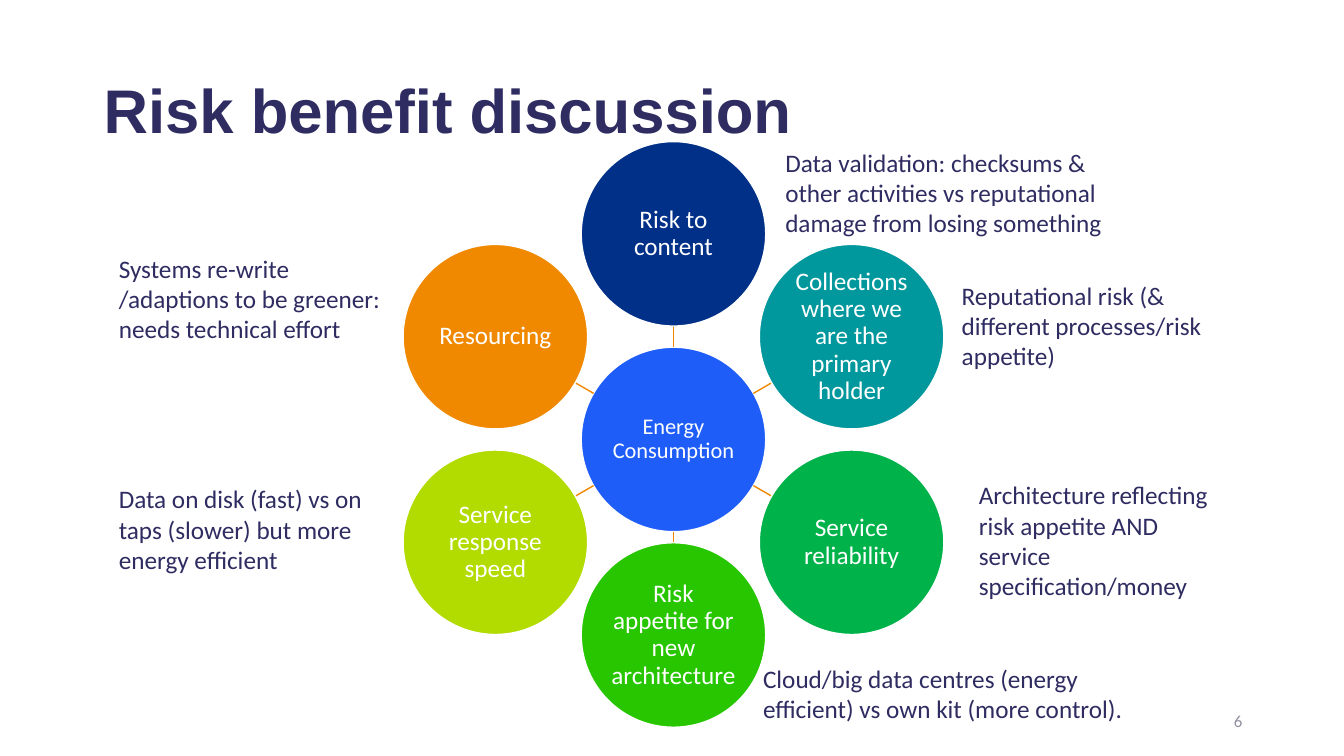
from math import cos, radians, sin
from typing import NamedTuple

from lxml.etree import SubElement
from pptx import Presentation
from pptx.dml.color import RGBColor
from pptx.enum.shapes import MSO_CONNECTOR, MSO_SHAPE
from pptx.enum.text import MSO_ANCHOR, PP_ALIGN
from pptx.oxml.ns import qn
from pptx.util import Inches, Pt

NAVY = "2E2C61"
WHITE = "FFFFFF"
ORANGE = "F08900"
HUB_X, HUB_Y = 6.68, 4.36
RADIUS = 0.915
RING = 2.04


class Topic(NamedTuple):
    text: str
    fill: str
    angle: float  # degrees clockwise from three o'clock
    reach: float = RING


class Note(NamedTuple):
    text: str
    left: float
    top: float
    width: float
    height: float


TOPICS = [
    Topic("Risk to content", "003088", -90),
    Topic("Collections where we are the primary holder", "00989D", -30),
    Topic("Service reliability", "00B24A", 30),
    Topic("Risk appetite for new architecture", "27C600", 90, 1.94),
    Topic("Service response speed", "B2DB00", 150),
    Topic("Resourcing", ORANGE, 210),
]

NOTES = [
    Note("Data validation: checksums & other activities vs reputational "
         "damage from losing something", 7.69, 1.41, 3.78, 1.01),
    Note("Reputational risk (& different processes/risk appetite)",
         9.44, 2.73, 2.71, 1.01),
    Note("Architecture reflecting risk appetite AND service "
         "specification/money", 9.61, 4.71, 2.71, 1.31),
    Note("Cloud/big data centres (energy efficient) vs own kit "
         "(more control).", 7.47, 6.53, 3.94, 0.71),
    Note("Data on disk (fast) vs on taps (slower) but more energy efficient",
         1.08, 4.75, 2.71, 1.01),
    Note("Systems re-write /adaptions to be greener: needs technical effort",
         1.08, 2.46, 2.81, 1.01),
]


def tint(code: str) -> RGBColor:
    return RGBColor.from_string(code)


def write(frame, text: str, size: float, color: str, font: str = "Calibri",
          bold: bool = False, align=PP_ALIGN.LEFT, anchor=MSO_ANCHOR.TOP,
          spacing: float = 1.0) -> None:
    frame.word_wrap = True
    frame.vertical_anchor = anchor
    para = frame.paragraphs[0]
    para.alignment = align
    para.line_spacing = spacing
    run = para.add_run()
    run.text = text
    run.font.name = font
    run.font.size = Pt(size)
    run.font.bold = bold
    run.font.color.rgb = tint(color)


def add_note(slide, note: Note, size: float = 18, color: str = NAVY,
             **style) -> None:
    box = slide.shapes.add_textbox(*map(Inches, note[1:]))
    write(box.text_frame, note.text, size, color, **style)


def add_disc(slide, text: str, fill: str, x: float, y: float,
             size: float = 18) -> None:
    """Draw a labelled circle centred on x, y."""
    disc = slide.shapes.add_shape(
        MSO_SHAPE.OVAL, Inches(x - RADIUS), Inches(y - RADIUS),
        Inches(2 * RADIUS), Inches(2 * RADIUS))
    disc.shadow.inherit = False
    disc.fill.solid()
    disc.fill.fore_color.rgb = tint(fill)
    disc.line.color.rgb = tint(WHITE)
    disc.line.width = Pt(1)
    frame = disc.text_frame
    frame.margin_left = frame.margin_right = Inches(0.01)
    frame.margin_top = frame.margin_bottom = Inches(0.01)
    write(frame, text, size, WHITE, align=PP_ALIGN.CENTER,
          anchor=MSO_ANCHOR.MIDDLE, spacing=0.9)


def polar(angle: float, reach: float) -> tuple[float, float]:
    """Return the point at a given angle and distance from the hub."""
    turn = radians(angle)
    return HUB_X + reach * cos(turn), HUB_Y + reach * sin(turn)


def add_spoke(slide, topic: Topic) -> None:
    start = polar(topic.angle, RADIUS)
    end = polar(topic.angle, topic.reach - RADIUS)
    spoke = slide.shapes.add_connector(
        MSO_CONNECTOR.STRAIGHT, *map(Inches, start + end))
    spoke.line.color.rgb = tint(ORANGE)
    spoke.line.width = Pt(1)
    SubElement(spoke.line._get_or_add_ln().getparent(), qn("a:effectLst"))


def main() -> None:
    deck = Presentation()
    deck.slide_width, deck.slide_height = Inches(13.33), Inches(7.5)
    slide = deck.slides.add_slide(deck.slide_layouts[6])

    add_note(slide, Note("Risk benefit discussion", 0.93, 0.4, 11.5, 1.45),
             44, font="Arial", bold=True, anchor=MSO_ANCHOR.MIDDLE,
             spacing=0.9)
    add_note(slide, Note("6", 9.42, 6.95, 3, 0.4), 12, "8F8F9E",
             align=PP_ALIGN.RIGHT, anchor=MSO_ANCHOR.MIDDLE)

    add_disc(slide, "Energy Consumption", "1E5DF8", HUB_X, HUB_Y, 16)
    for topic in TOPICS:
        add_spoke(slide, topic)
        add_disc(slide, topic.text, topic.fill,
                 *polar(topic.angle, topic.reach))
    for note in NOTES:
        add_note(slide, note)

    deck.save("out.pptx")


if __name__ == "__main__":
    main()
